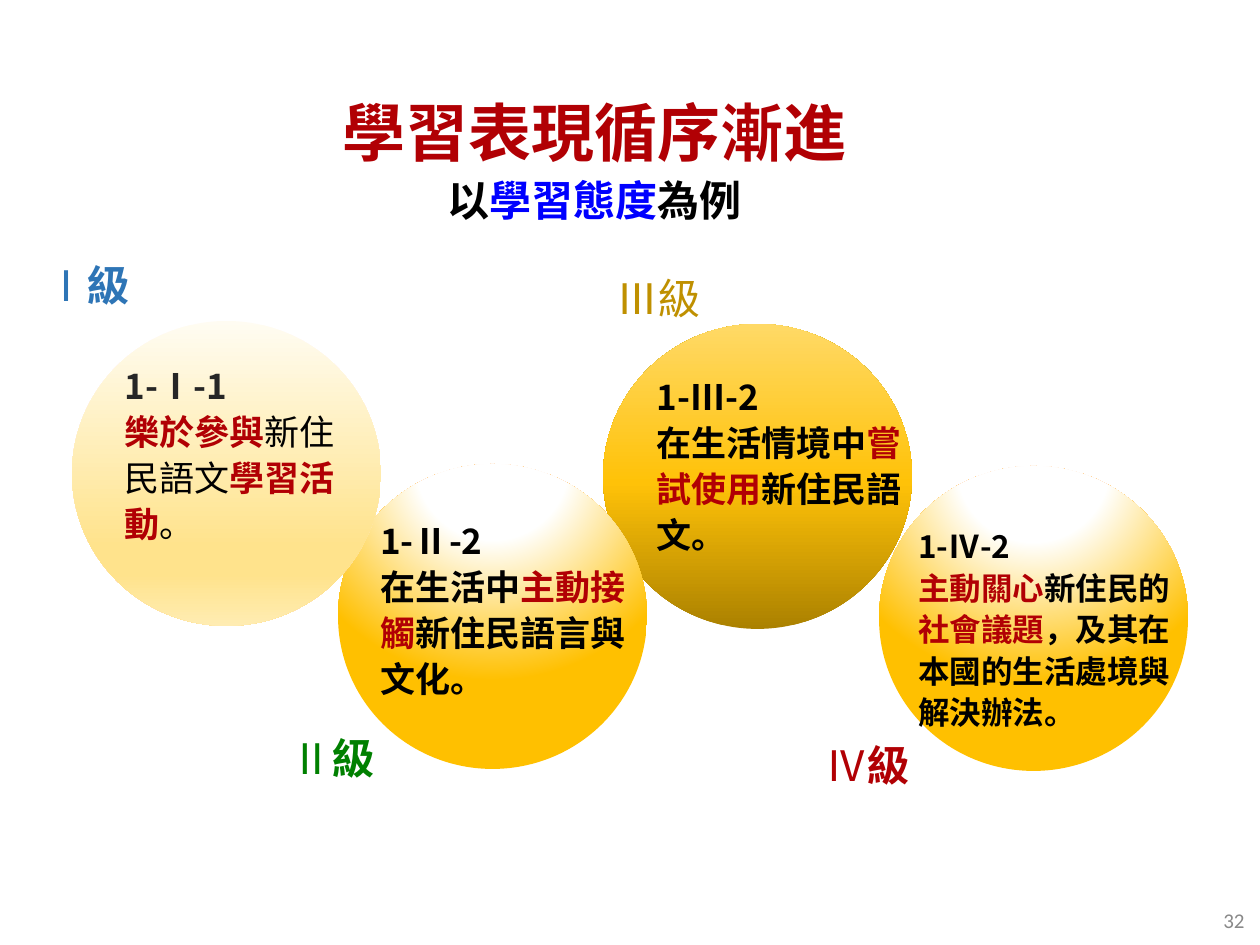
from lxml.etree import SubElement
from pptx import Presentation
from pptx.dml.color import RGBColor
from pptx.enum.shapes import MSO_SHAPE
from pptx.enum.text import MSO_ANCHOR, MSO_AUTO_SIZE, PP_ALIGN
from pptx.oxml.ns import qn
from pptx.util import Emu, Pt

SCALE = 914400 / 126
CJK = "Noto Sans CJK SC"
RED, BLACK, BLUE = "B10004", "000000", "0000FF"


def px(n):
    return Emu(round(n * SCALE))


def rgb(value):
    return RGBColor.from_string(value)


class Deck:
    def __init__(self, width, height):
        self.prs = Presentation()
        self.prs.slide_width, self.prs.slide_height = px(width), px(height)
        self.s = self.prs.slides.add_slide(self.prs.slide_layouts[6])

    def ball(self, x, y, stops, angle=None):
        """Circle with a linear gradient, or a radial one without an angle."""
        sp = self.s.shapes.add_shape(MSO_SHAPE.OVAL, px(x), px(y), px(309), px(305))
        sp.shadow.inherit = False
        sp.line.fill.background()
        sp.fill.gradient()
        grad = sp._element.spPr.find(qn("a:gradFill"))
        for child in list(grad):
            grad.remove(child)
        gs_list = SubElement(grad, qn("a:gsLst"))
        for pos, color in stops:
            gs = SubElement(gs_list, qn("a:gs"), pos=str(pos * 1000))
            SubElement(gs, qn("a:srgbClr"), val=color)
        if angle is None:
            path = SubElement(grad, qn("a:path"), {"path": "circle"})
            SubElement(path, qn("a:fillToRect"), l="50000", t="-80000", r="50000", b="180000")
        else:
            SubElement(grad, qn("a:lin"), ang=str(angle * 60000), scaled="0")

    def text(self, box, lines, size, font=CJK, wrap=True, grow=True, **paragraph):
        """One paragraph; each line is a list of (text, colour, bold) runs."""
        sp = self.s.shapes.add_textbox(*map(px, box))
        tf = sp.text_frame
        frame = {
            "word_wrap": wrap,
            "auto_size": MSO_AUTO_SIZE.SHAPE_TO_FIT_TEXT if grow else MSO_AUTO_SIZE.NONE,
            "vertical_anchor": MSO_ANCHOR.TOP if grow else MSO_ANCHOR.MIDDLE,
        }
        for name, value in frame.items():
            setattr(tf, name, value)
        p = tf.paragraphs[0]
        for name, value in paragraph.items():
            setattr(p, name, value)
        for i, line in enumerate(lines):
            if i:
                p.add_line_break()
            for words, color, bold, *own_size in line:
                r = p.add_run()
                r.text = words
                style = {"name": font, "size": Pt(own_size[0] if own_size else size), "bold": bold}
                for name, value in style.items():
                    setattr(r.font, name, value)
                r.font.color.rgb = rgb(color)
                SubElement(r._r.get_or_add_rPr(), qn("a:ea"), typeface=font)


def main():
    d = Deck(1260, 945)

    # Balls, from the last level at the back to the first in front
    glow = [(0, "FFFFFF"), (35, "FFFFFF"), (100, "FFC000")]
    d.ball(879, 466, glow)
    d.ball(603, 324, [(0, "AB8100"), (48, "FFC208"), (100, "FFD966")], 270)
    d.ball(338, 464, glow)
    d.ball(72, 321, [(0, "FFFCF2"), (74, "FFE38C"), (83, "FFE38C"), (100, "FFECB2")], 90)

    # Learning performance in each ball
    contents = [
        ((112, 354, 268, 266), 20, [
            [("1-Ⅰ-1", "262626", True)],
            [("樂於參與", RED, True), ("新住民語文", BLACK, False),
             ("學習活動", RED, True), ("。", BLACK, False)]]),
        ((368, 509, 300, 218), 20, [
            [("1-Ⅱ-2", BLACK, True)],
            [("在生活中", BLACK, True), ("主動接觸", RED, True),
             ("新住民語言與文化。", BLACK, True)]]),
        ((644, 365, 272, 223), 20, [
            [("1-Ⅲ-2", BLACK, True)],
            [("在生活情境中", BLACK, True), ("嘗試使用", RED, True),
             ("新住民語文。", BLACK, True)]]),
        ((906, 517, 280, 223), 18, [
            [("1-Ⅳ-2", BLACK, True)],
            [("主動關心", RED, True), ("新住民的", BLACK, True), ("社會議題", RED, True),
             ("，及其在本國的生活處境與解決辦法。", BLACK, True)]]),
    ]
    for box, size, lines in contents:
        d.text(box, lines, size, line_spacing=1.1)

    # Level labels
    labels = [
        (33, 253, "Ⅰ", "2E75B6", True),
        (278, 726, "Ⅱ", "008000", True),
        (604, 266, "Ⅲ", "BF9000", False),
        (813, 733, "Ⅳ", RED, True),
    ]
    for x, y, numeral, color, bold in labels:
        d.text((x, y, 140, 81), [[(numeral, color, False), ("級", color, bold)]], 24, wrap=False)

    # Title and subtitle
    d.text((289, 58, 611, 195), [
        [("學習表現循序漸進", RED, True, 36)],
        [("以", BLACK, True), ("學習態度", BLUE, True), ("為例", BLACK, True)],
    ], 24, grow=False, alignment=PP_ALIGN.CENTER, line_spacing=1.1)

    # Page number
    d.text((974, 895, 283, 50), [[("32", "898989", False)]], 12, font="Calibri",
           grow=False, alignment=PP_ALIGN.RIGHT)

    d.prs.save("out.pptx")


if __name__ == "__main__":
    main()
